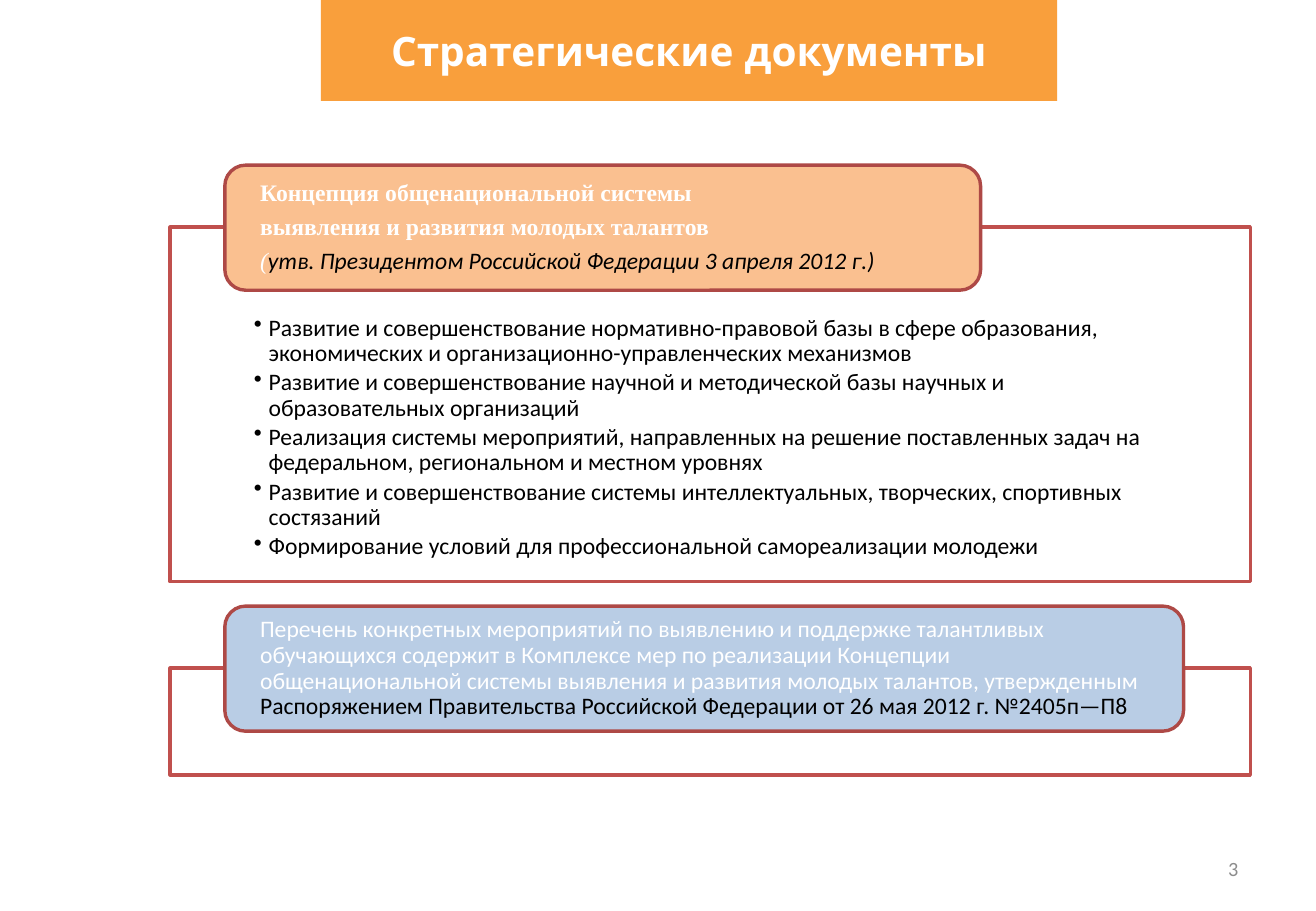
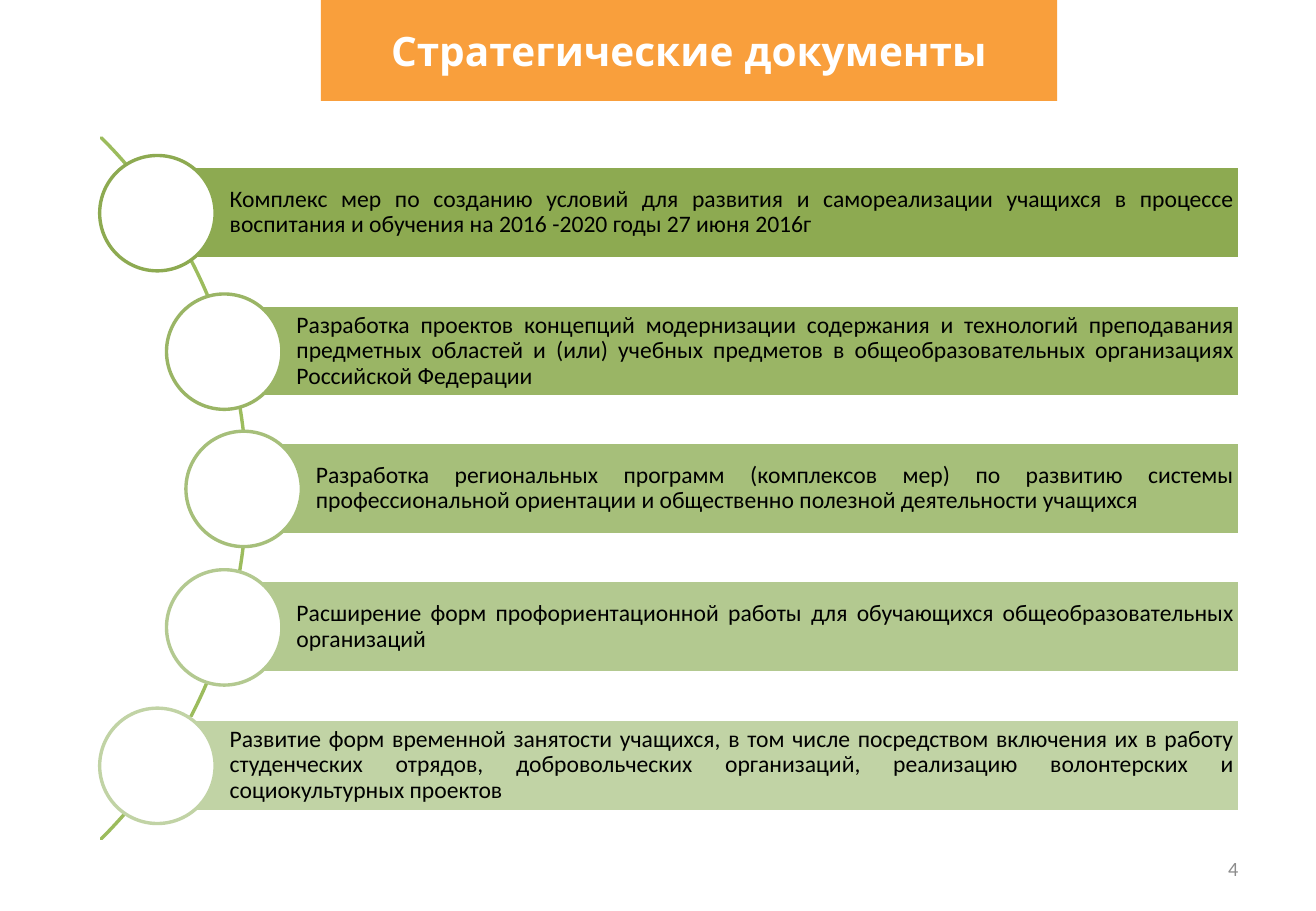
from lxml import etree
from pptx import Presentation
from pptx.dml.color import RGBColor
from pptx.enum.shapes import MSO_SHAPE as Shape
from pptx.enum.text import MSO_ANCHOR as Anchor, PP_ALIGN as Align
from pptx.oxml.ns import qn
from pptx.util import Emu, Pt

EMU_PER_PX = 9144
COLORS = {
    "white": "FFFFFF",
    "black": "000000",
    "number": "8C8C8C",
    "band": "F99F3C",
    "frame": "C0504D",
    "header_line": "AE4946",
    "peach": "FAC090",
    "blue": "B9CDE5",
    "arc": "9CBC5D",
    "green_1": "8DAA51",
    "green_2": "9AB565",
    "green_3": "A6BF7A",
    "green_4": "B3C990",
    "green_5": "C1D3A5",
}
TITLE = "Стратегические документы"
GOALS = [
    "Развитие и совершенствование нормативно-правовой базы в сфере образования, экономических и организационно-управленческих механизмов",
    "Развитие и совершенствование научной и методической базы научных и образовательных организаций",
    "Реализация системы мероприятий, направленных на решение поставленных задач на федеральном, региональном и местном уровнях",
    "Развитие и совершенствование системы интеллектуальных, творческих, спортивных состязаний",
    "Формирование условий для профессиональной самореализации молодежи",
]
CONCEPT_STYLE = {"font": "Times New Roman", "color": "white", "bold": True}
CONCEPT = [
    [("Концепция общенациональной системы", CONCEPT_STYLE)],
    [("выявления и развития молодых талантов", CONCEPT_STYLE)],
    [
        ("(", {"font": "Times New Roman", "color": "white", "italic": True}),
        ("утв. Президентом Российской Федерации 3 апреля 2012 г.)", {"italic": True}),
    ],
]
ACTIONS = [
    [
        ("Перечень конкретных мероприятий по выявлению и поддержке талантливых обучающихся содержит в Комплексе мер по реализации Концепции общенациональной системы выявления и развития молодых талантов, утвержденным ", {"color": "white"}),
        ("Распоряжением Правительства Российской Федерации от 26 мая 2012 г. №2405п—П8", {}),
    ]
]
MEASURES = [
    (129, "green_1", "Комплекс мер по созданию условий для развития и самореализации учащихся в процессе воспитания и обучения на 2016 -2020 годы 27 июня 2016г"),
    (184, "green_2", "Разработка проектов концепций модернизации содержания и технологий преподавания предметных областей и (или) учебных предметов в общеобразовательных организациях Российской Федерации"),
    (200, "green_3", "Разработка региональных программ (комплексов мер) по развитию системы профессиональной ориентации и общественно полезной деятельности учащихся"),
    (184, "green_4", "Расширение форм профориентационной работы для обучающихся общеобразовательных организаций"),
    (129, "green_5", "Развитие форм временной занятости учащихся, в том числе посредством включения их в работу студенческих отрядов, добровольческих организаций, реализацию волонтерских и социокультурных проектов"),
]


def px(value):
    return Emu(value * EMU_PER_PX)


def rgb(name):
    return RGBColor.from_string(COLORS[name])


class Deck:
    def __init__(self, width, height):
        self.presentation = Presentation()
        self.presentation.slide_width = px(width)
        self.presentation.slide_height = px(height)
        self.slide = None

    def add_slide(self, title, number):
        layout = self.presentation.slide_layouts[5]
        self.slide = self.presentation.slides.add_slide(layout)
        shape = self.slide.shapes.title
        shape.left, shape.top, shape.width, shape.height = map(px, (264, 0, 606, 83))
        shape.fill.solid()
        shape.fill.fore_color.rgb = rgb("band")
        title_style = {"font": "Quicksand", "size": 24, "color": "white", "bold": True}
        self.fill_text(shape, [[(title, title_style)]], align=Align.CENTER)
        box = self.slide.shapes.add_textbox(*map(px, (776, 695, 253, 40)))
        number_style = {"size": 12, "color": "number"}
        self.fill_text(box, [[(str(number), number_style)]], align=Align.RIGHT)

    def style_run(self, run, font="Calibri", size=14, color="black", bold=False, italic=False):
        run.font.name = font
        run.font.size = Pt(size)
        run.font.color.rgb = rgb(color)
        run.font.bold = bold
        run.font.italic = italic

    def fill_text(self, shape, paragraphs, align=Align.LEFT, anchor=Anchor.MIDDLE,
                  margins=None, spacing=None, after=None, bullet=False):
        text_frame = shape.text_frame
        text_frame.word_wrap = True
        text_frame.vertical_anchor = anchor
        if margins:
            (text_frame.margin_left, text_frame.margin_top,
             text_frame.margin_right, text_frame.margin_bottom) = map(px, margins)
        for index, runs in enumerate(paragraphs):
            paragraph = text_frame.add_paragraph() if index else text_frame.paragraphs[0]
            if bullet:
                self.add_bullet(paragraph)
            paragraph.alignment = align
            if spacing:
                paragraph.line_spacing = spacing
                paragraph.space_after = Pt(after)
            for text, style in runs:
                run = paragraph.add_run()
                run.text = text
                self.style_run(run, **style)

    def add_bullet(self, paragraph):
        properties = paragraph._p.get_or_add_pPr()
        properties.set("marL", str(px(12)))
        properties.set("indent", str(px(-12)))
        etree.SubElement(properties, qn("a:buChar")).set("char", "•")

    def add_shape(self, kind, left, top, width, height, fill=None, line="white"):
        shape = self.slide.shapes.add_shape(kind, *map(px, (left, top, width, height)))
        shape.shadow.inherit = False
        if fill:
            shape.fill.solid()
            shape.fill.fore_color.rgb = rgb(fill)
        else:
            shape.fill.background()
        shape.line.color.rgb = rgb(line)
        shape.line.width = Pt(2)
        return shape

    def add_section(self, top, height, header_width, header_fill, header, bullets=()):
        frame = self.add_shape(Shape.RECTANGLE, 140, top, 889, height, line="frame")
        if bullets:
            self.fill_text(frame, [[(text, {})] for text in bullets], anchor=Anchor.TOP,
                           margins=(69, 73, 69, 11), spacing=0.9, after=2.1, bullet=True)
        box = self.add_shape(Shape.ROUNDED_RECTANGLE, 185, top - 51, header_width, 103,
                             header_fill, "header_line")
        self.fill_text(box, header, margins=(24, 0, 24, 0), spacing=0.9, after=4.9)

    def add_arc(self, left, top, size):
        arc = self.add_shape(Shape.BLOCK_ARC, left, top, size, size, line="arc")
        for index, value in enumerate((189, 27, 0)):
            arc.adjustments[index] = value

    def add_measure(self, left, top, color, text):
        bar = self.add_shape(Shape.RECTANGLE, left, top, 1020 - left, 76, color)
        self.fill_text(bar, [[(text, {})]], align=Align.JUSTIFY,
                       margins=(60, 4, 4, 4), spacing=0.9, after=4.9)
        self.add_shape(Shape.OVAL, left - 47, top - 9, 95, 95, "white", color)


def main():
    deck = Deck(1083, 750)

    deck.add_slide(TITLE, 3)
    deck.add_section(187, 292, 622, "peach", CONCEPT, GOALS)
    deck.add_section(550, 88, 789, "blue", ACTIONS)

    deck.add_slide(TITLE, 4)
    deck.add_arc(-613, -6, 816)
    for index, (left, color, text) in enumerate(MEASURES):
        deck.add_measure(left, round(137 + 113.75 * index), color, text)

    deck.presentation.save("out.pptx")


if __name__ == "__main__":
    main()
